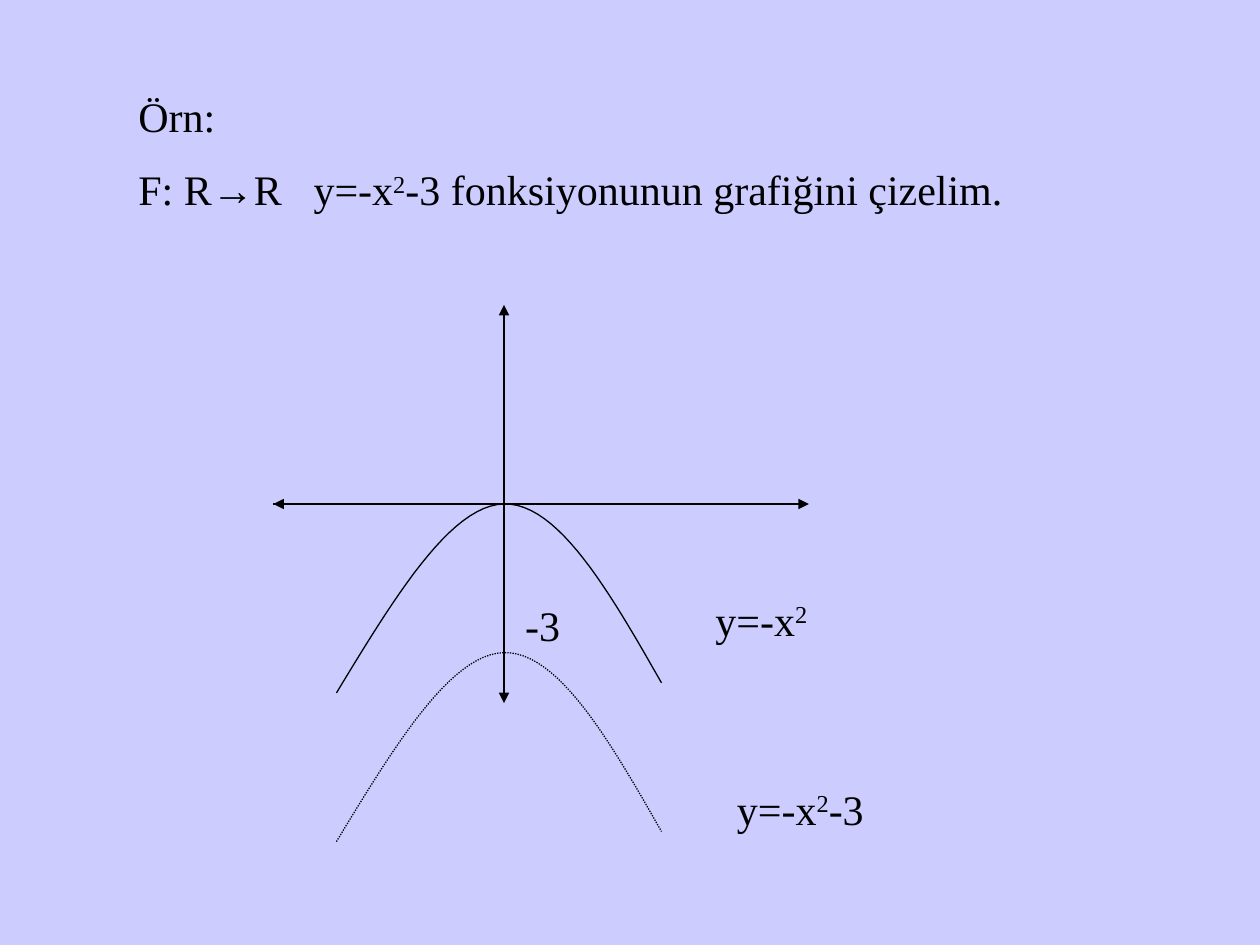
from lxml.etree import SubElement
from pptx import Presentation
from pptx.dml.color import RGBColor
from pptx.enum.dml import MSO_LINE
from pptx.enum.shapes import MSO_CONNECTOR
from pptx.enum.text import MSO_AUTO_SIZE
from pptx.oxml.ns import qn
from pptx.util import Inches, Pt

COLORS = {"background": "CCCCFF", "ink": "000000"}
FONT = "Times New Roman"
CURVE_STEPS = 24


def ink_line(line):
    line.color.rgb = RGBColor.from_string(COLORS["ink"])
    line.width = Pt(0.75)


def add_text(slide, left, top, width, height, paragraphs, wrap=True):
    """Each paragraph is a list of strings; every second one is superscript."""
    box = slide.shapes.add_textbox(Inches(left), Inches(top), Inches(width), Inches(height))
    frame = box.text_frame
    frame.word_wrap = wrap
    frame.auto_size = MSO_AUTO_SIZE.SHAPE_TO_FIT_TEXT
    for index, parts in enumerate(paragraphs):
        paragraph = frame.add_paragraph() if index else frame.paragraphs[0]
        if index:
            paragraph.space_before = Pt(13)
        if any("\t" in part for part in parts):
            tabs = SubElement(paragraph._p.get_or_add_pPr(), qn("a:tabLst"))
            SubElement(tabs, qn("a:tab"), pos=str(Inches(1.39)), algn="l")
        paragraph.font.name = FONT
        paragraph.font.size = Pt(24)
        paragraph.font.color.rgb = RGBColor.from_string(COLORS["ink"])
        for position, part in enumerate(parts):
            run = paragraph.add_run()
            run.text = part
            if position % 2:
                run._r.get_or_add_rPr().set("baseline", "30000")


def add_arrow(slide, start, end):
    arrow = slide.shapes.add_connector(
        MSO_CONNECTOR.STRAIGHT, *(Inches(value) for value in (*start, *end)))
    ink_line(arrow.line)
    SubElement(arrow.line._get_or_add_ln(), qn("a:tailEnd"), type="triangle")
    SubElement(arrow._element.spPr, qn("a:effectLst"))


def bezier_points(*controls):
    for step in range(CURVE_STEPS + 1):
        t = step / CURVE_STEPS
        weights = ((1 - t) ** 3, 3 * t * (1 - t) ** 2, 3 * t ** 2 * (1 - t), t ** 3)
        yield tuple(sum(w * point[axis] for w, point in zip(weights, controls))
                    for axis in (0, 1))


def add_parabola(slide, x, y, dash=None):
    """Downward parabola with its vertex at x, y."""
    left = bezier_points((-1.33, 1.5), (-0.88, 0.76), (-0.43, 0.01), (0, 0))
    right = bezier_points((0, 0), (0.43, -0.01), (0.84, 0.7), (1.25, 1.42))
    points = [(Inches(x + dx), Inches(y + dy)) for dx, dy in [*left, *list(right)[1:]]]
    builder = slide.shapes.build_freeform(*points[0])
    builder.add_line_segments(points[1:], close=False)
    curve = builder.convert_to_shape()
    curve.shadow.inherit = False
    curve.fill.background()
    ink_line(curve.line)
    if dash:
        curve.line.dash_style = dash


def add_graph(slide, x, y):
    """Axes, parabolas and labels around the origin at x, y."""
    shift = 1.18
    add_arrow(slide, (x, y - 1.42), (x, y + 1.58))
    add_arrow(slide, (x - 1.83, y), (x + 2.42, y))
    add_parabola(slide, x, y)
    add_arrow(slide, (x - 1.5, y), (x - 1.83, y))
    add_parabola(slide, x, y + shift, MSO_LINE.ROUND_DOT)
    add_arrow(slide, (x, y - 1.25), (x, y - 1.58))
    add_text(slide, x + 0.07, y + 0.71, 0.48, 0.5, [["-3"]], wrap=False)
    add_text(slide, x + 1.58, y + 0.67, 1.25, 0.5, [["y=-x", "2"]])
    add_text(slide, x + 1.75, y + 2.17, 1.42, 0.5, [["y=-x", "2", "-3"]])


def main():
    presentation = Presentation()
    presentation.slide_width, presentation.slide_height = Inches(10), Inches(7.5)
    slide = presentation.slides.add_slide(presentation.slide_layouts[6])
    slide.background.fill.solid()
    slide.background.fill.fore_color.rgb = RGBColor.from_string(COLORS["background"])
    add_text(slide, 1, 0.67, 8, 1.1, [
        ["Örn:"],
        ["F: R→R\ty=-x", "2", "-3 fonksiyonunun grafiğini çizelim."],
    ])
    add_graph(slide, 4, 4)
    presentation.save("out.pptx")


if __name__ == "__main__":
    main()
